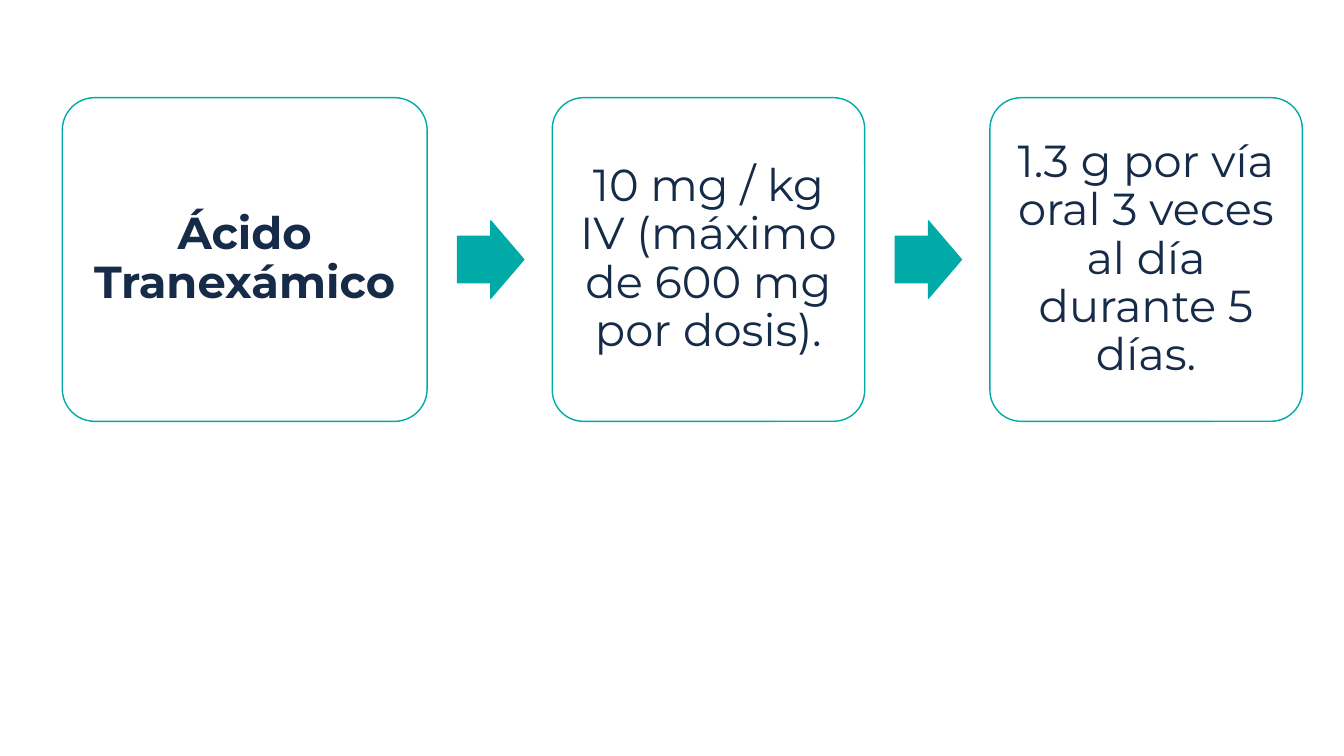
from pptx import Presentation
from pptx.dml.color import RGBColor
from pptx.enum.shapes import MSO_SHAPE
from pptx.enum.text import MSO_ANCHOR, PP_ALIGN
from pptx.util import Pt

ROUNDED = MSO_SHAPE.ROUNDED_RECTANGLE
ARROW = MSO_SHAPE.RIGHT_ARROW
MIDDLE = MSO_ANCHOR.MIDDLE
CENTER = PP_ALIGN.CENTER

COLORS = {"teal": "00AAA7", "navy": "152B48", "white": "FFFFFF"}
FONT = "Montserrat"

STEPS = [
    ("Ácido Tranexámico", 260.6, True),
    ("10 mg / kg IV (máximo de 600 mg por dosis).", 223.2, False),
    ("1.3 g por vía oral 3 veces al día durante 5 días.", 223.2, False),
]
GAP = 89.4
ARROW_W, ARROW_H, ARROW_OFFSET = 47.5, 55.5, 21.7


def color(name):
    return RGBColor.from_string(COLORS[name])


def add_shape(s, kind, x, y, w, h, fill, line_width, adjustments):
    sp = s.shapes.add_shape(kind, Pt(x), Pt(y), Pt(w), Pt(h))
    sp.shadow.inherit = False
    sp.fill.solid()
    sp.fill.fore_color.rgb = color(fill)
    sp.line.color.rgb = color("teal")
    sp.line.width = Pt(line_width)
    for i, value in enumerate(adjustments):
        sp.adjustments[i] = value
    return sp


def write(sp, text, size=32, bold=False, inset=9.4):
    tf = sp.text_frame
    tf.word_wrap = True
    tf.vertical_anchor = MIDDLE
    tf.margin_left = tf.margin_right = Pt(inset)
    tf.margin_top = tf.margin_bottom = Pt(inset)
    p = tf.paragraphs[0]
    p.alignment = CENTER
    p.line_spacing = 0.9
    r = p.add_run()
    r.text = text
    r.font.name = FONT
    r.font.size = Pt(size)
    r.font.bold = bold
    r.font.color.rgb = color("navy")


def add_process(s, x, y, h):
    """Draw the dosing steps from left to right, with an arrow in each gap."""
    for i, (text, w, bold) in enumerate(STEPS):
        sp = add_shape(s, ROUNDED, x, y, w, h, "white", 1, [0.1])
        write(sp, text, bold=bold)
        x += w
        if i < len(STEPS) - 1:
            add_shape(s, ARROW, x + ARROW_OFFSET, y + (h - ARROW_H) / 2,
                      ARROW_W, ARROW_H, "teal", 0.75, [0.6, 0.5])
            x += GAP


def main():
    prs = Presentation()
    prs.slide_width, prs.slide_height = Pt(960), Pt(540)
    s = prs.slides.add_slide(prs.slide_layouts[6])
    add_process(s, x=44.5, y=69.8, h=231.2)
    prs.save("out.pptx")


if __name__ == "__main__":
    main()
